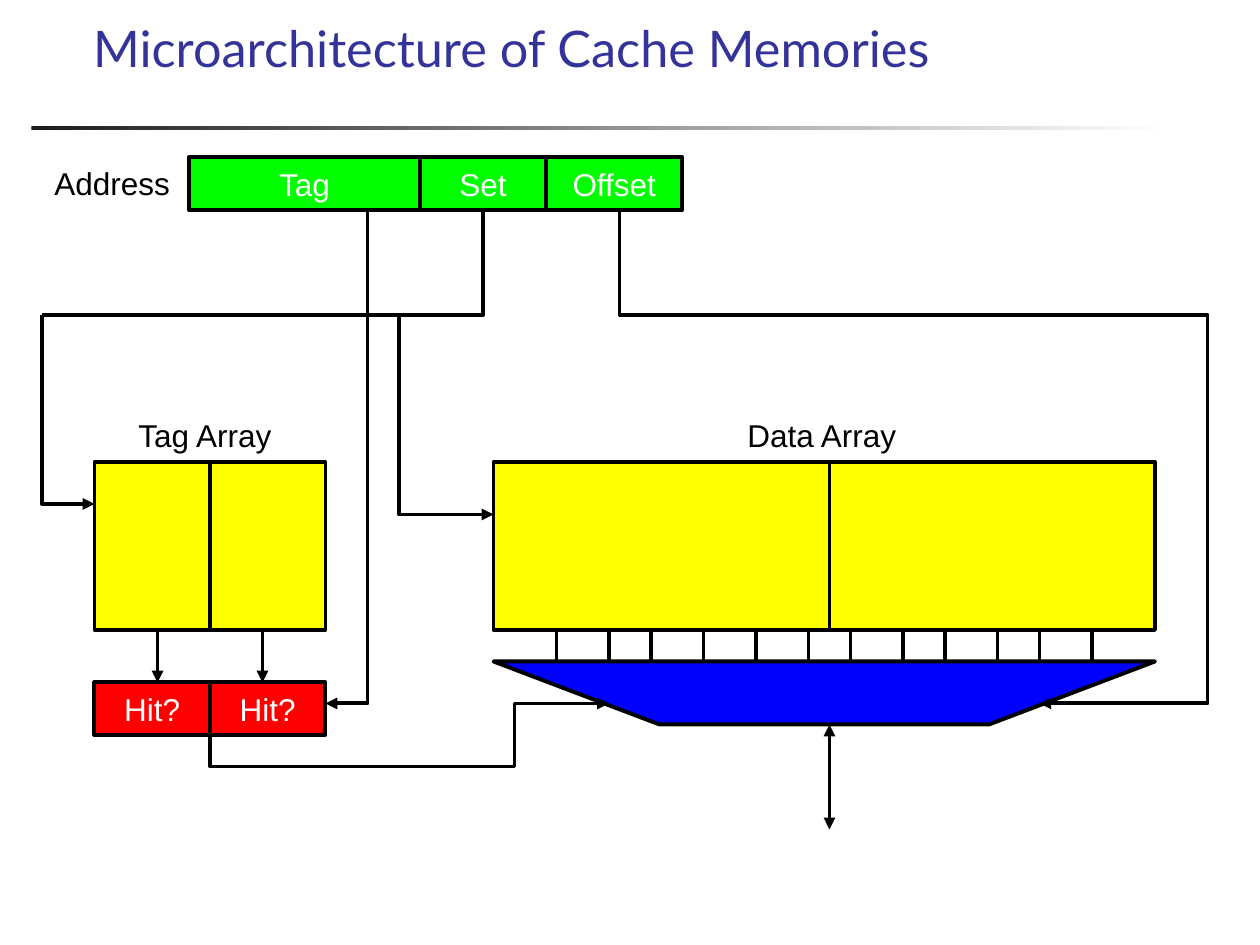
from dataclasses import dataclass

from pptx import Presentation
from pptx import util as u
from pptx.dml.color import RGBColor
from pptx.enum import shapes, text
from pptx.oxml import ns
from lxml import etree

WIDTH, HEIGHT = u.Inches(10), u.Inches(7.5)
COLUMNS, ROWS = 120, 90
CELL = WIDTH // COLUMNS
STEPS = 10
BLACK, WHITE = "000000", "FFFFFF"
GREEN, YELLOW, RED, BLUE = "00FF00", "FFFF00", "FF0000", "0000FF"


@dataclass(frozen=True)
class Block:
    column: float
    row: float
    columns: float
    rows: float
    color: str
    caption: str = ""


@dataclass(frozen=True)
class Label:
    column: float
    row: float
    columns: float
    rows: float
    caption: str
    font: str = "Arial"
    size: float = 18
    color: str = BLACK
    anchor: text.MSO_ANCHOR = text.MSO_ANCHOR.TOP


@dataclass(frozen=True)
class Route:
    points: tuple
    arrow: bool = True


@dataclass(frozen=True)
class Link:
    column: float
    top: float
    bottom: float
    ends: tuple = ()


ARRAYS = [Block(9, 44, 22, 16, YELLOW), Block(47, 44, 63, 16, YELLOW)]
FIELDS = [
    Block(18, 15, 22, 5, GREEN, "Tag"),
    Block(40, 15, 12, 5, GREEN, "Set"),
    Block(52, 15, 13, 5, GREEN, "Offset"),
]
HITS = [Block(9 + 11 * way, 65, 11, 5, RED, "Hit?") for way in range(2)]
MULTIPLEXER = ((47, 63), (62.8, 69), (94.2, 69), (110, 63))
ROUTES = [
    Route(((4, 30), (4, 48), (9, 48))),
    Route(((4, 30), (38, 30), (38, 49), (47, 49))),
    Route(((46, 20), (46, 30), (36, 30)), arrow=False),
    Route(((59, 20), (59, 30), (115, 30), (115, 67), (99, 67))),
    Route(((35, 20), (35, 67), (31, 67))),
    Route(((20, 70), (20, 73), (49, 73), (49, 67), (58, 67))),
]
DATA_COLUMNS = (53, 58, 62, 67, 72, 77, 81, 86, 90, 95, 99, 104)
LINKS = [
    *(Link(column, 60, 63) for column in DATA_COLUMNS),
    *(Link(column, 60, 65, ("tailEnd",)) for column in (15, 25)),
    *(Link(column, 44, 60) for column in (20, 79)),
    Link(79, 69, 79, ("headEnd", "tailEnd")),
]
LABELS = [
    Label(7.7, 1.8, 106.3, 6.2, "Microarchitecture of Cache Memories",
          "Lato", 28.8, "333399", text.MSO_ANCHOR.BOTTOM),
    Label(4, 15, 13.4, 4.8, "Address"),
    Label(12, 39, 15.6, 4.8, "Tag Array"),
    Label(70, 39, 16.8, 4.8, "Data Array"),
]


def rgb(color: str) -> RGBColor:
    return RGBColor.from_string(color)


def cells(*values: float) -> list[int]:
    return [round(value * CELL) for value in values]


def apply(target, values: dict) -> None:
    for name, value in values.items():
        setattr(target, name, value)


def outline(shape) -> None:
    shape.line.width = u.Pt(2.25)
    shape.line.color.rgb = rgb(BLACK)


def add_arrowheads(shape, ends: tuple) -> None:
    line = shape.element.spPr.find(ns.qn("a:ln"))
    for end in ends:
        etree.SubElement(line, ns.qn(f"a:{end}"), type="triangle")


def write(shape, caption: str, font: str, size: float, color: str,
          anchor, alignment, wrap: bool = False) -> None:
    frame = shape.text_frame
    apply(frame, {"word_wrap": wrap, "vertical_anchor": anchor})
    paragraph = frame.paragraphs[0]
    paragraph.alignment = alignment
    run = paragraph.add_run()
    run.text = caption
    apply(run.font, {"name": font, "size": u.Pt(size)})
    run.font.color.rgb = rgb(color)


def draw_rule(slide) -> None:
    shape = slide.shapes.add_shape(
        shapes.MSO_SHAPE.RECTANGLE, *cells(3, 12, 108, 0.4))
    shape.shadow.inherit = False
    shape.line.fill.background()
    shape.fill.gradient()
    shape.fill.gradient_angle = 0
    for stop, color, position in zip(
            shape.fill.gradient_stops, ("1C1C1C", WHITE), (0, 1)):
        stop.color.rgb = rgb(color)
        stop.position = position


def draw_block(slide, block: Block) -> None:
    shape = slide.shapes.add_shape(
        shapes.MSO_SHAPE.RECTANGLE,
        *cells(block.column, block.row, block.columns, block.rows))
    shape.shadow.inherit = False
    shape.fill.solid()
    shape.fill.fore_color.rgb = rgb(block.color)
    outline(shape)
    if block.caption:
        write(shape, block.caption, "Arial", 18, WHITE,
              text.MSO_ANCHOR.MIDDLE, text.PP_ALIGN.CENTER)


def draw_path(slide, points: tuple, close: bool = False):
    start, *rest = [(x * STEPS, y * STEPS) for x, y in points]
    builder = slide.shapes.build_freeform(*start, scale=CELL / STEPS)
    builder.add_line_segments(rest, close=close)
    shape = builder.convert_to_shape()
    shape.shadow.inherit = False
    outline(shape)
    return shape


def draw_multiplexer(slide) -> None:
    shape = draw_path(slide, MULTIPLEXER, close=True)
    shape.fill.solid()
    shape.fill.fore_color.rgb = rgb(BLUE)


def draw_route(slide, route: Route) -> None:
    shape = draw_path(slide, route.points)
    shape.fill.background()
    if route.arrow:
        add_arrowheads(shape, ("tailEnd",))


def draw_link(slide, link: Link) -> None:
    connector = slide.shapes.add_connector(
        shapes.MSO_CONNECTOR.STRAIGHT,
        *cells(link.column, link.top, link.column, link.bottom))
    outline(connector)
    add_arrowheads(connector, link.ends)
    etree.SubElement(connector.element.spPr, ns.qn("a:effectLst"))


def draw_label(slide, label: Label) -> None:
    shape = slide.shapes.add_textbox(
        *cells(label.column, label.row, label.columns, label.rows))
    write(shape, label.caption, label.font, label.size, label.color,
          label.anchor, text.PP_ALIGN.LEFT, label.font == "Lato")


def main() -> None:
    presentation = Presentation()
    apply(presentation, {"slide_width": WIDTH, "slide_height": HEIGHT})
    slide = presentation.slides.add_slide(presentation.slide_layouts[6])
    draw_rule(slide)
    for block in ARRAYS + FIELDS + HITS:
        draw_block(slide, block)
    draw_multiplexer(slide)
    for route in ROUTES:
        draw_route(slide, route)
    for link in LINKS:
        draw_link(slide, link)
    for label in LABELS:
        draw_label(slide, label)
    presentation.save("out.pptx")


if __name__ == "__main__":
    main()
